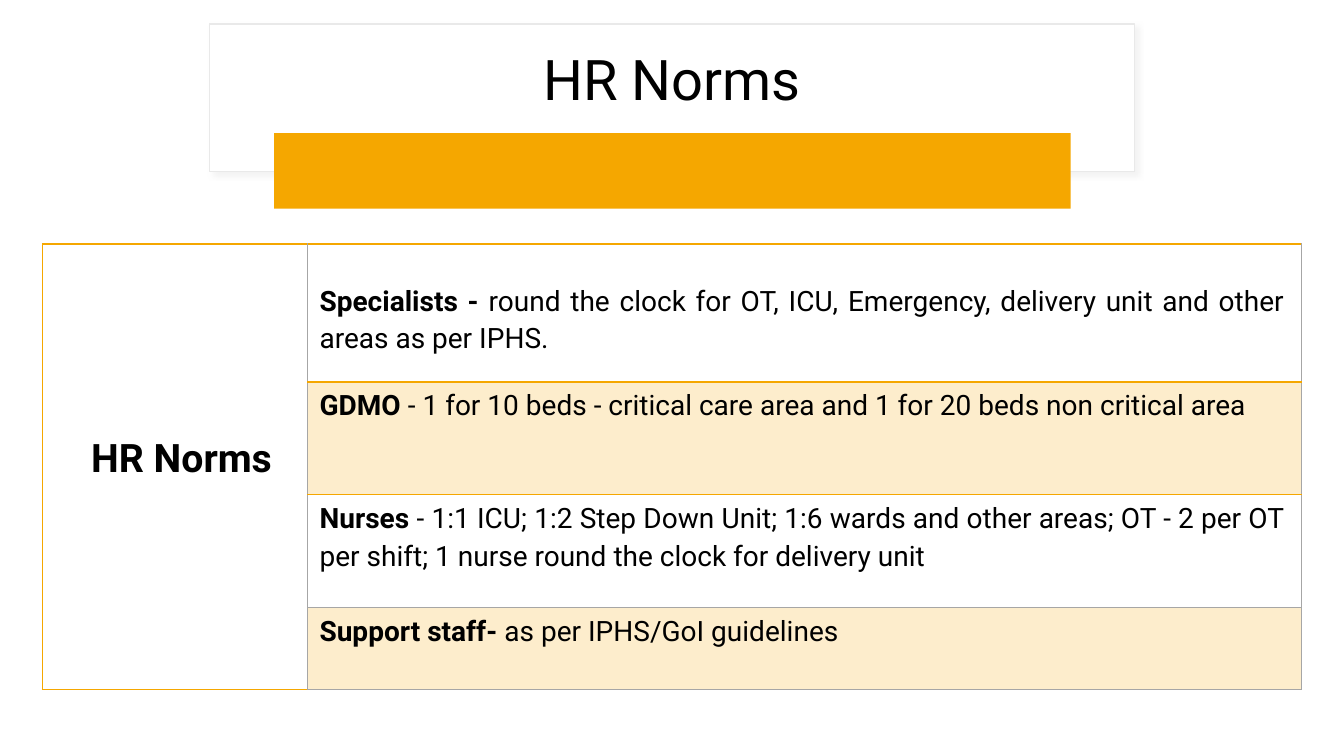
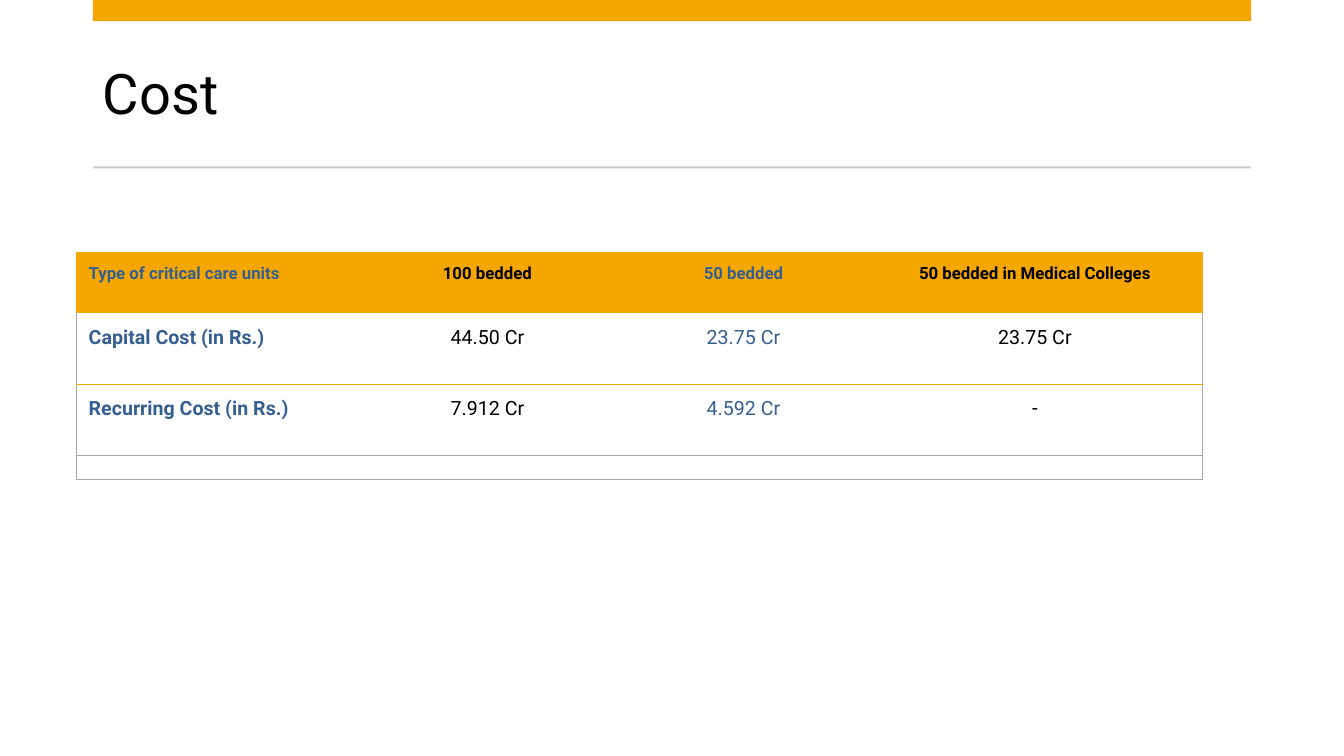
from lxml.etree import SubElement
from pptx import Presentation
from pptx.dml.color import RGBColor
from pptx.enum.shapes import MSO_SHAPE
from pptx.enum.text import MSO_ANCHOR, PP_ALIGN
from pptx.oxml import parse_xml
from pptx.oxml.ns import nsdecls, qn
from pptx.util import Inches, Pt

FONT = "Roboto"
BLACK = RGBColor(0x00, 0x00, 0x00)
WHITE = RGBColor(0xFF, 0xFF, 0xFF)
AMBER = RGBColor(0xF5, 0xA7, 0x00)
PALE_AMBER = RGBColor(0xFD, 0xED, 0xCC)
BLUE = RGBColor(0x36, 0x5F, 0x91)
CARD_EDGE = RGBColor(0xE9, 0xE9, 0xE9)
RULE_GREY = RGBColor(0xC9, 0xC9, 0xC9)
GRID_GREY = RGBColor(0xA6, 0xA6, 0xA6)

prs = Presentation()
prs.slide_width, prs.slide_height = Inches(13.33), Inches(7.5)
title_only = prs.slide_layouts[5]


def add_bar(slide, left, top, width, height, colour):
    bar = slide.shapes.add_shape(MSO_SHAPE.RECTANGLE, Inches(left), Inches(top),
                                 Inches(width), Inches(height))
    bar.shadow.inherit = False
    bar.fill.solid()
    bar.fill.fore_color.rgb = colour
    bar.line.fill.background()
    return bar


def style_cell(cell, borders, fill, insets):
    """Set the borders (left, right, top, bottom as colour and points, or None), fill and insets."""
    properties = cell._tc.get_or_add_tcPr()
    for edge, border in zip(("a:lnL", "a:lnR", "a:lnT", "a:lnB"), borders):
        line = SubElement(properties, qn(edge))
        if border:
            colour, points = border
            line.set("w", str(Pt(points)))
            solid = SubElement(line, qn("a:solidFill"))
            SubElement(solid, qn("a:srgbClr"), val=str(colour))
        else:
            SubElement(line, qn("a:noFill"))
    if fill is None:
        cell.fill.background()
    else:
        cell.fill.solid()
        cell.fill.fore_color.rgb = fill
    (cell.margin_left, cell.margin_top,
     cell.margin_right, cell.margin_bottom) = [Inches(inset) for inset in insets]


# Titles, one slide each
slides = []
for heading, box, align in (
    ("HR Norms", (2.3, 0.34, 8.73, 0.95), PP_ALIGN.CENTER),
    ("Cost", (0.92, 0.37, 11.49, 1.18), PP_ALIGN.LEFT),
):
    slide = prs.slides.add_slide(title_only)
    title = slide.shapes.title
    title.left, title.top, title.width, title.height = [Inches(n) for n in box]
    title.text_frame.text = heading
    title.text_frame.vertical_anchor = MSO_ANCHOR.MIDDLE
    paragraph = title.text_frame.paragraphs[0]
    paragraph.alignment = align
    paragraph.line_spacing = 0.9
    font = paragraph.runs[0].font
    font.name, font.size, font.color.rgb = FONT, Pt(40), BLACK
    slides.append(slide)
norms_slide, cost_slide = slides

# HR Norms: title card and band
card = add_bar(norms_slide, 2.08, 0.24, 9.17, 1.46, WHITE)
card.line.color.rgb = CARD_EDGE
card.line.width = Pt(1)
card_effects = card.element.spPr.find(qn("a:effectLst"))
card_effects.append(parse_xml(
    f'<a:outerShdw {nsdecls("a")} blurRad="{Pt(4)}" dist="{Pt(3)}" dir="2700000">'
    '<a:srgbClr val="D9D9D9"><a:alpha val="30000"/></a:srgbClr></a:outerShdw>'))
norms_slide.shapes.title.element.addprevious(card.element)
add_bar(norms_slide, 2.72, 1.32, 7.9, 0.75, AMBER)

# HR Norms: table
norms = [
    ("Specialists - ", "round the clock for OT, ICU, Emergency, delivery unit and other areas as per IPHS."),
    ("GDMO", " - 1 for 10 beds - critical care area and 1 for 20 beds non critical area"),
    ("Nurses", " - 1:1 ICU; 1:2 Step Down Unit; 1:6 wards and other areas; OT - 2 per OT per shift; "
               "1 nurse round the clock for delivery unit"),
    ("Support staff- ", "as per IPHS/GoI guidelines"),
]
norm_heights = (1.37, 1.12, 1.12, 0.81)
norms_table = norms_slide.shapes.add_table(
    4, 2, Inches(0.42), Inches(2.42), Inches(12.49), Inches(sum(norm_heights))).table
norms_table.first_row = norms_table.horz_banding = False
norms_table.columns[0].width = Inches(2.63)
norms_table.columns[1].width = Inches(9.86)

amber_line, grey_line = (AMBER, 1), (GRID_GREY, 0.5)
row_lines = [amber_line, (AMBER, 2), amber_line, grey_line, grey_line]
for row, ((staff, rule), height) in enumerate(zip(norms, norm_heights)):
    norms_table.rows[row].height = Inches(height)
    style_cell(norms_table.cell(row, 0),
               (amber_line, grey_line, amber_line if row == 0 else None, amber_line if row in (0, 3) else None),
               None, (0.3, 0.03, 0.17, 0.26))
    cell = norms_table.cell(row, 1)
    style_cell(cell, (grey_line, grey_line, row_lines[row], row_lines[row + 1]),
               PALE_AMBER if row % 2 else None, (0.12, 0.03, 0.17, 0.26))
    cell.vertical_anchor = MSO_ANCHOR.BOTTOM if row == 0 else MSO_ANCHOR.TOP
    paragraph = cell.text_frame.paragraphs[0]
    paragraph.alignment = PP_ALIGN.JUSTIFY
    paragraph.line_spacing = 1.15
    for text, bold in ((staff, True), (rule, False)):
        run = paragraph.add_run()
        run.text = text
        run.font.name, run.font.size, run.font.bold = FONT, Pt(20), bold
        run.font.color.rgb = BLACK

row_label = norms_table.cell(0, 0)
row_label.merge(norms_table.cell(3, 0))
row_label.text_frame.text = "HR Norms"
row_label.vertical_anchor = MSO_ANCHOR.MIDDLE
paragraph = row_label.text_frame.paragraphs[0]
paragraph.alignment = PP_ALIGN.CENTER
paragraph.line_spacing = 1.15
font = paragraph.runs[0].font
font.name, font.size, font.bold, font.color.rgb = FONT, Pt(28), True, BLACK

# Cost: top band and rule under the title
add_bar(cost_slide, 0.92, 0, 11.49, 0.21, AMBER)
add_bar(cost_slide, 0.92, 1.65, 11.49, 0.02, RULE_GREY)

# Cost: table
costs = [
    ("Type of critical care units", "100 bedded", "50 bedded", "50 bedded in Medical Colleges"),
    ("Capital Cost (in Rs.)", "44.50 Cr", "23.75 Cr", "23.75 Cr"),
    ("Recurring Cost (in Rs.)", "7.912 Cr", "4.592 Cr", "-"),
    ("", "", "", ""),
]
cost_widths = (2.76, 2.63, 2.45, 3.33)
cost_heights = (0.6, 0.71, 0.71, 0.24)
cost_table = cost_slide.shapes.add_table(
    4, 4, Inches(0.76), Inches(2.5), Inches(sum(cost_widths)), Inches(sum(cost_heights))).table
cost_table.first_row = cost_table.horz_banding = False
for column, width in zip(cost_table.columns, cost_widths):
    column.width = Inches(width)

thin_amber = (AMBER, 0.5)
row_lines = [thin_amber, thin_amber, thin_amber, grey_line, grey_line]
for row, (entries, height) in enumerate(zip(costs, cost_heights)):
    cost_table.rows[row].height = Inches(height)
    side_line = thin_amber if row == 0 else grey_line
    for col, entry in enumerate(entries):
        cell = cost_table.cell(row, col)
        style_cell(cell, (side_line if col == 0 else None, side_line if col == 3 else None,
                          row_lines[row], row_lines[row + 1]),
                   AMBER if row == 0 else None, (0.12, 0.02 if entry else 0, 0.12, 0))
        paragraph = cell.text_frame.paragraphs[0]
        if not entry:
            # Small type keeps the empty row at its set height
            SubElement(paragraph._p, qn("a:endParaRPr"), sz="800")
            continue
        paragraph.text = entry
        paragraph.alignment = PP_ALIGN.CENTER if col else PP_ALIGN.LEFT
        paragraph.line_spacing = 1.5
        font = paragraph.runs[0].font
        font.name = "Arial" if entry == "-" else FONT
        font.size = Pt(14 if row else 12)
        font.bold = row == 0 or col == 0
        font.color.rgb = BLACK if col % 2 else BLUE

prs.save("out.pptx")
